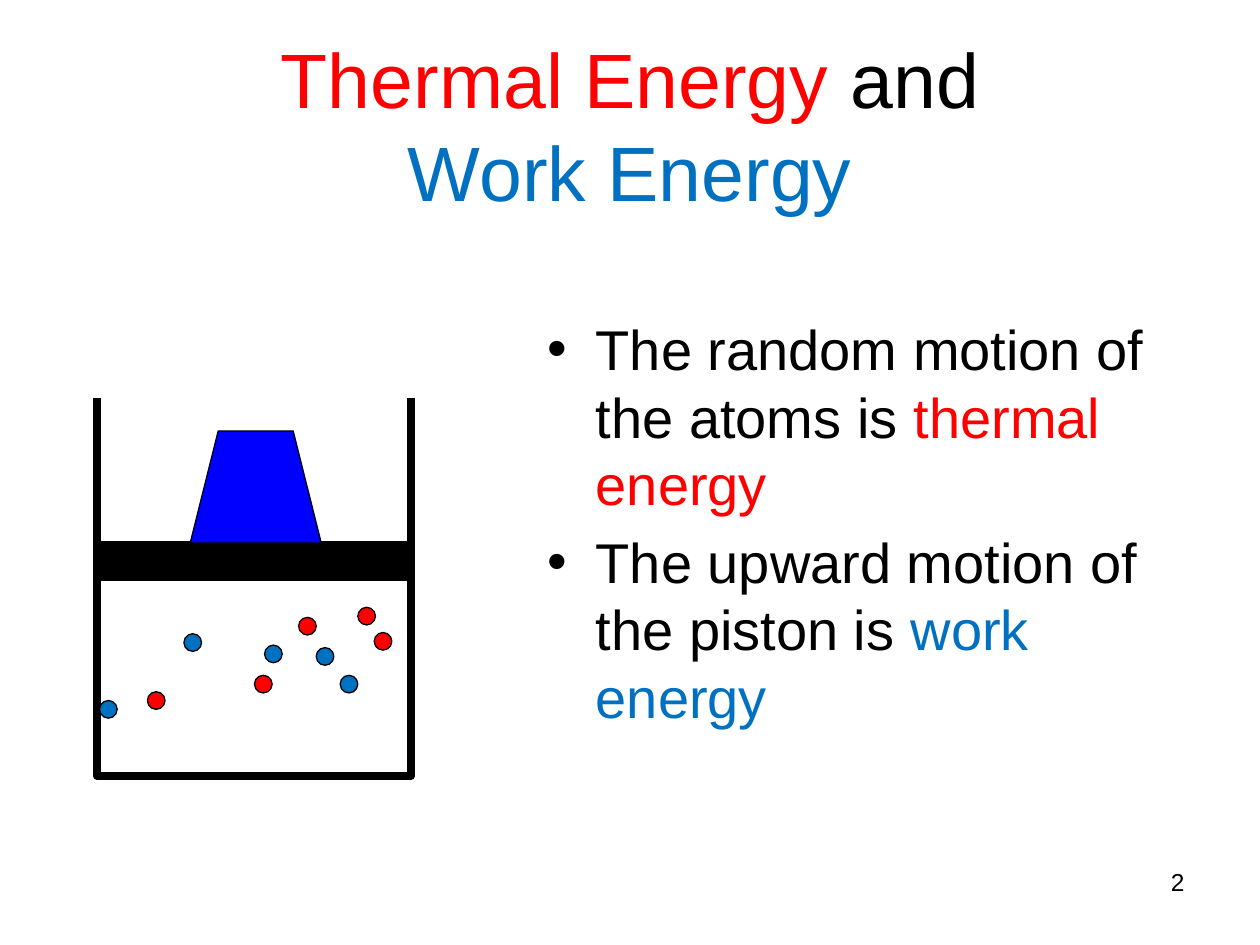
from lxml import etree
from pptx import Presentation
from pptx.dml.color import RGBColor
from pptx.enum.shapes import MSO_SHAPE
from pptx.enum.text import MSO_ANCHOR, MSO_AUTO_SIZE, PP_ALIGN
from pptx.oxml.ns import qn
from pptx.util import Inches, Pt

ELLIPSE, RECTANGLE, TRAPEZOID = MSO_SHAPE.OVAL, MSO_SHAPE.RECTANGLE, MSO_SHAPE.TRAPEZOID
MIDDLE, TOP = MSO_ANCHOR.MIDDLE, MSO_ANCHOR.TOP
LEFT, CENTER, RIGHT = PP_ALIGN.LEFT, PP_ALIGN.CENTER, PP_ALIGN.RIGHT
BLACK, THERMAL, WORK, WEIGHT = "000000", "FF0000", "0070C0", "0000FF"


def color(value):
    return RGBColor.from_string(value)


class SlideBuilder:
    font = "Arial"
    line_width = 0.75

    def __init__(self, slide):
        self.slide = slide

    def place(self, box, left, top, width, height):
        box.left, box.top = Inches(left), Inches(top)
        box.width, box.height = Inches(width), Inches(height)

    def frame(self, box, anchor=TOP):
        frame = box.text_frame
        frame.word_wrap = True
        frame.auto_size = MSO_AUTO_SIZE.NONE
        frame.vertical_anchor = anchor
        return frame

    def span(self, para, text, size, value=BLACK):
        span = para.add_run()
        span.text = text
        span.font.name = self.font
        span.font.size = Pt(size)
        span.font.color.rgb = color(value)

    def title(self, lines, area, size):
        box = self.slide.shapes.title
        self.place(box, *area)
        para = self.frame(box, MIDDLE).paragraphs[0]
        para.alignment = CENTER
        for index, spans in enumerate(lines):
            if index:
                para.add_line_break()
            for text, value in spans:
                self.span(para, text, size, value)

    def text(self, spans, area, size, align=LEFT):
        box = self.slide.shapes.add_textbox(*map(Inches, area))
        para = self.frame(box).paragraphs[0]
        para.alignment = align
        for text, value in spans:
            self.span(para, text, size, value)

    def bullets(self, items, area, size, indent):
        box = self.slide.shapes.add_textbox(*map(Inches, area))
        frame = self.frame(box)
        for index, spans in enumerate(items):
            para = frame.add_paragraph() if index else frame.paragraphs[0]
            para.space_before = Pt(0.2 * size)
            properties = para._p.get_or_add_pPr()
            properties.set("marL", str(Inches(indent)))
            properties.set("indent", str(-Inches(indent)))
            etree.SubElement(properties, qn("a:buFont")).set("typeface", self.font)
            etree.SubElement(properties, qn("a:buChar")).set("char", "•")
            for text, value in spans:
                self.span(para, text, size, value)

    def outline(self, points, width):
        """Draw an open, unfilled path through the points."""
        start, *rest = [(Inches(x), Inches(y)) for x, y in points]
        builder = self.slide.shapes.build_freeform(*start)
        builder.add_line_segments(rest, close=False)
        path = builder.convert_to_shape()
        path.shadow.inherit = False
        path.fill.background()
        path.line.color.rgb = color(BLACK)
        path.line.width = Pt(width)

    def shape(self, kind, area, fill):
        shape = self.slide.shapes.add_shape(kind, *map(Inches, area))
        shape.shadow.inherit = False
        shape.fill.solid()
        shape.fill.fore_color.rgb = color(fill)
        shape.line.color.rgb = color(BLACK)
        shape.line.width = Pt(self.line_width)


def main():
    deck = Presentation()
    deck.slide_width, deck.slide_height = Inches(10), Inches(7.5)
    page = SlideBuilder(deck.slides.add_slide(deck.slide_layouts[5]))

    page.title(
        [[("Thermal Energy ", THERMAL), ("and", BLACK)], [("Work Energy", WORK)]],
        (0.5, 0.36, 9, 1.25), 44)
    page.bullets(
        [[("The random motion of the atoms is ", BLACK), ("thermal energy", THERMAL)],
         [("The upward motion of the piston is ", BLACK), ("work energy", WORK)]],
        (4.25, 2.45, 4.98, 4.02), 32, 0.38)
    page.text([("2", BLACK)], (7.17, 6.83, 2.33, 0.52), 14, RIGHT)

    # Cylinder, open at the top
    left, right, rim, floor = 0.77, 3.26, 3.16, 6.16
    page.outline([(left, rim), (left, floor), (right, floor), (right, rim)], 4.5)

    atom_size = 0.14
    atoms = [
        (1.46, 5.03, WORK), (1.17, 5.49, THERMAL), (0.79, 5.56, WORK),
        (2.51, 5.14, WORK), (2.37, 4.9, THERMAL), (2.97, 5.02, THERMAL),
        (2.7, 5.36, WORK), (2.84, 4.82, THERMAL), (2.1, 5.12, WORK),
        (2.02, 5.36, THERMAL),
    ]
    for x, y, fill in atoms:
        page.shape(ELLIPSE, (x, y, atom_size, atom_size), fill)

    # Piston with the weight on it
    page.shape(RECTANGLE, (left, 4.3, right - left, 0.31), BLACK)
    page.shape(TRAPEZOID, (1.51, 3.42, 1.04, 0.89), WEIGHT)

    deck.save("out.pptx")


if __name__ == "__main__":
    main()
